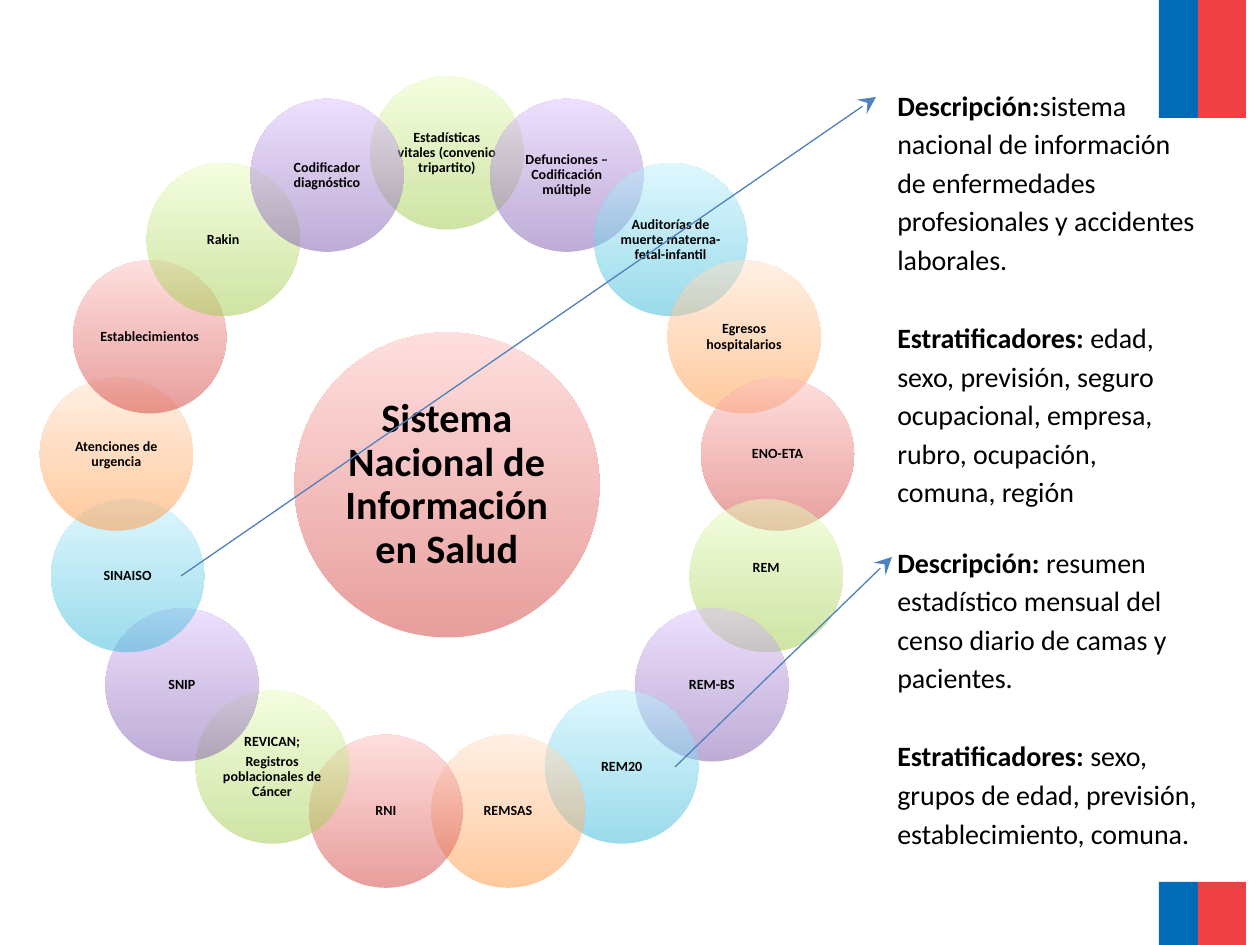
from math import cos, pi, sin

from lxml import etree
from pptx import Presentation
from pptx.dml.color import RGBColor
from pptx.enum.shapes import MSO_CONNECTOR, MSO_SHAPE
from pptx.enum.text import MSO_ANCHOR, PP_ALIGN
from pptx.oxml.ns import qn
from pptx.util import Emu, Pt

PX = 914400 / 126
RECT, OVAL = MSO_SHAPE.RECTANGLE, MSO_SHAPE.OVAL
STRAIGHT = MSO_CONNECTOR.STRAIGHT
MIDDLE, CENTER = MSO_ANCHOR.MIDDLE, PP_ALIGN.CENTER

RED = ("D13F3B", "FFC1BF")
GREEN = ("9FCA4A", "EBFEC1")
PURPLE = ("7E5AAC", "DCC0FC")
BLUE = ("36B8D8", "BFF1FF")
ORANGE = ("FF943B", "FFE2CB")
CYCLE = [GREEN, PURPLE, BLUE, ORANGE, RED]

CX, CY, RING_R = 447, 485, 332
HUB_D, NODE_D = 305, 153

SYSTEMS = [
    "Estadísticas vitales (convenio tripartito)",
    "Defunciones – Codificación múltiple",
    "Auditorías de muerte materna-fetal-infantil",
    "Egresos hospitalarios",
    "ENO-ETA",
    "REM",
    "REM-BS",
    "REM20",
    "REMSAS",
    "RNI",
    "REVICAN;\nRegistros poblacionales de Cáncer",
    "SNIP",
    "SINAISO",
    "Atenciones de urgencia",
    "Establecimientos",
    "Rakin",
    "Codificador diagnóstico",
]

NOTES = [
    ((885, 534, 352, 354), (675, 767, 892, 557), [
        ("Descripción:", " resumen estadístico mensual del censo diario de camas y pacientes."),
        ("Estratificadores: ", "sexo, grupos de edad, previsión, establecimiento, comuna."),
    ]),
    ((885, 77, 329, 321), (181, 576, 876, 97), [
        ("Descripción:", "sistema nacional de información de enfermedades profesionales y accidentes laborales."),
        ("Estratificadores: ", "edad, sexo, previsión, seguro ocupacional, empresa, rubro, ocupación, comuna, región"),
    ]),
]


def px(*values):
    return [Emu(round(v * PX)) for v in values]


def add_text(p, text, size=8, bold=True, color="000000", spacing=0.9, align=None):
    p.line_spacing = spacing
    p.alignment = align
    r = p.add_run()
    r.text = text
    r.font.name = "Calibri"
    r.font.size = Pt(size)
    r.font.bold = bold
    r.font.color.rgb = RGBColor.from_string(color)


prs = Presentation()
prs.slide_width, prs.slide_height = px(1260, 945)
s = prs.slides.add_slide(prs.slide_layouts[6])

for top, height in [(0, 118), (882, 63)]:
    for left, width, color in [(1159, 39, "006CB7"), (1198, 48, "EF4144")]:
        sp = s.shapes.add_shape(RECT, *px(left, top, width, height))
        sp.shadow.inherit = False
        sp.fill.solid()
        sp.fill.fore_color.rgb = RGBColor.from_string(color)
        sp.line.fill.background()

circles = [(CX, CY, HUB_D, RED, "Sistema Nacional de Información en Salud", 23, 4)]
for i, name in enumerate(SYSTEMS):
    angle = 2 * pi * i / len(SYSTEMS)
    x, y = CX + RING_R * sin(angle), CY - RING_R * cos(angle)
    circles.append((x, y, NODE_D, CYCLE[i % len(CYCLE)], name, 8, 1))

for x, y, d, colors, name, size, inset in circles:
    sp = s.shapes.add_shape(OVAL, *px(x - d / 2, y - d / 2, d, d))
    sp.shadow.inherit = False
    sp.line.fill.background()
    sp.fill.gradient()
    sp.fill.gradient_angle = 90
    for stop, color in zip(sp.fill.gradient_stops, colors):
        stop.color.rgb = RGBColor.from_string(color)
    for clr in sp.fill._xPr.iter(qn("a:srgbClr")):
        etree.SubElement(clr, qn("a:alpha"), val="50000")
    tf = sp.text_frame
    tf.word_wrap = True
    tf.vertical_anchor = MIDDLE
    bottom = 16 if name == "REM" else inset
    tf.margin_left, tf.margin_top, tf.margin_right, tf.margin_bottom = px(inset, inset, inset, bottom)
    for n, line in enumerate(name.split("\n")):
        p = tf.add_paragraph() if n else tf.paragraphs[0]
        p.space_after = Pt(size * 0.35)
        add_text(p, line, size=size, align=CENTER)

for box, arrow, paragraphs in NOTES:
    sp = s.shapes.add_textbox(*px(*box))
    tf = sp.text_frame
    tf.word_wrap = True
    for n, (label, body) in enumerate(paragraphs):
        p = tf.add_paragraph() if n else tf.paragraphs[0]
        p.space_before = Pt(22.5 * n)
        add_text(p, label, size=16, spacing=1.15)
        add_text(p, body, size=16, bold=False, spacing=1.15)
    cn = s.shapes.add_connector(STRAIGHT, *px(*arrow))
    cn.line.color.rgb = RGBColor.from_string("4F81BD")
    cn.line.width = Pt(0.75)
    etree.SubElement(cn.line._get_or_add_ln(), qn("a:tailEnd"), type="stealth", w="lg", len="lg")
    etree.SubElement(cn._element.spPr, qn("a:effectLst"))

prs.save("out.pptx")
